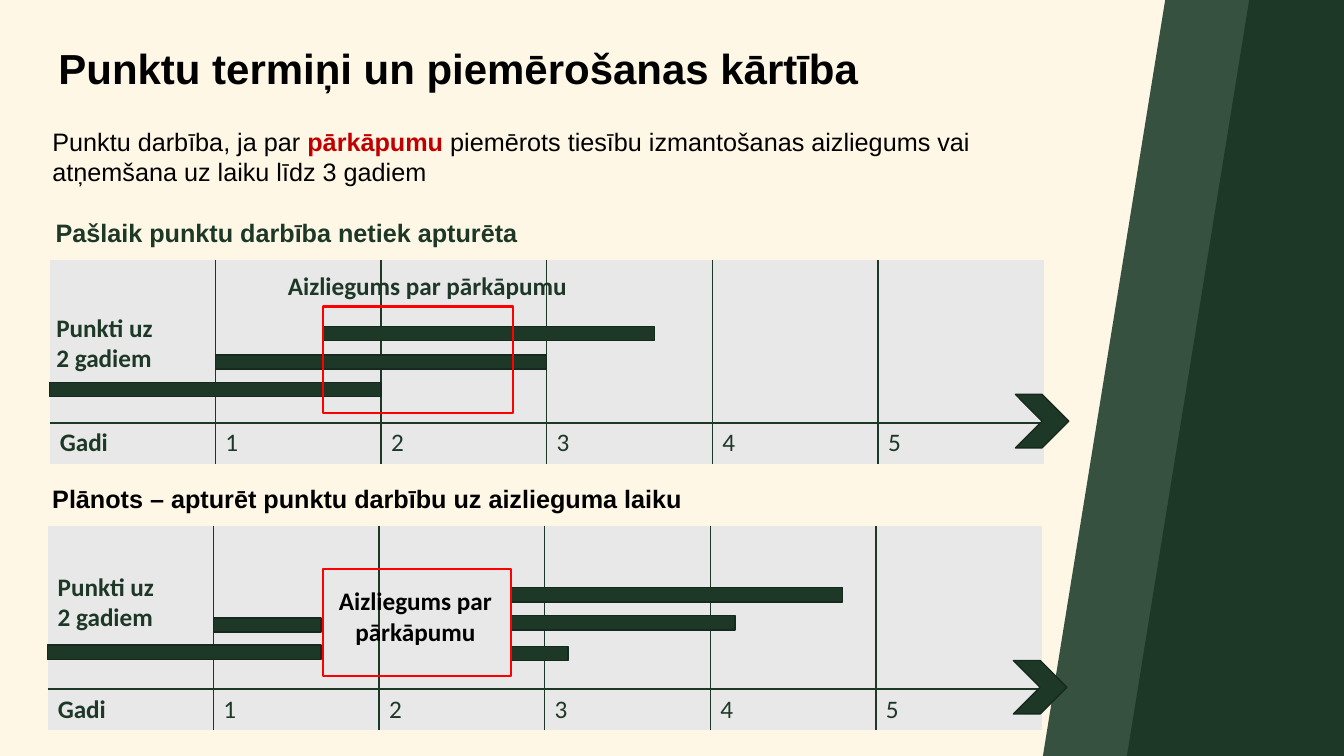
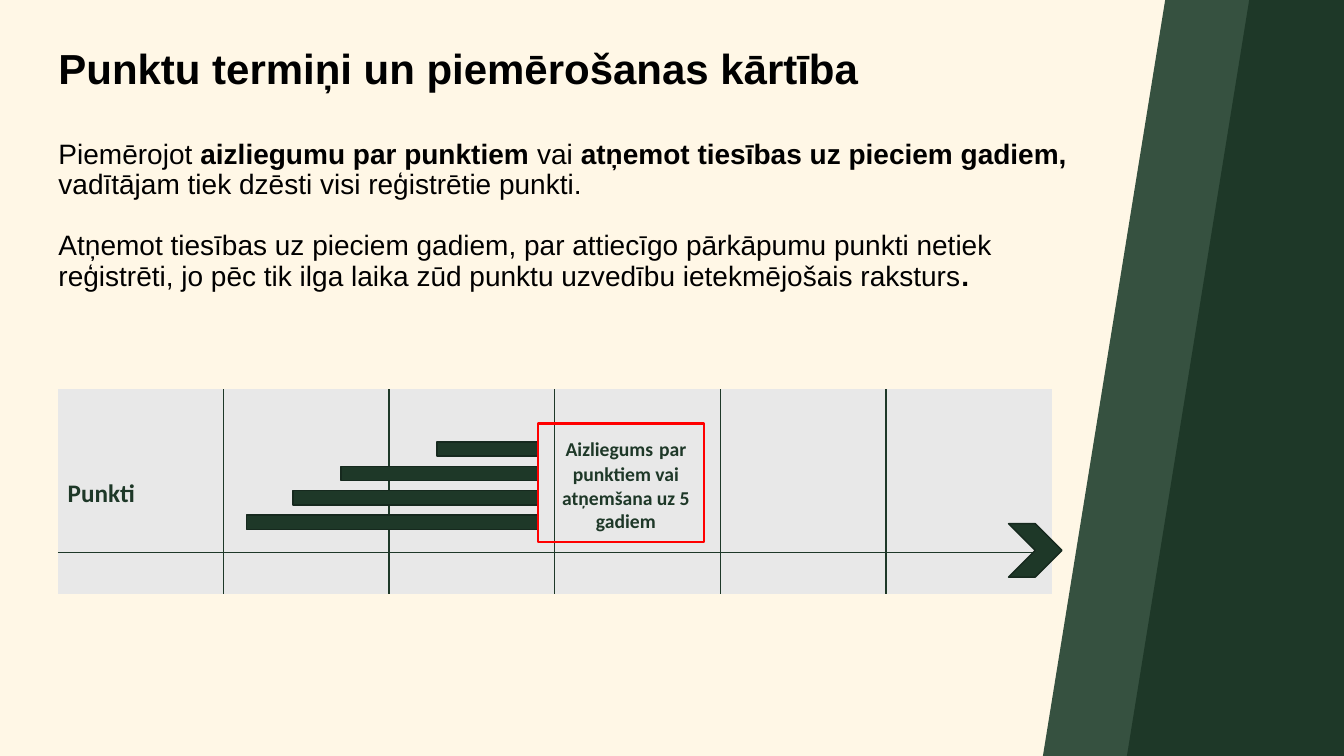
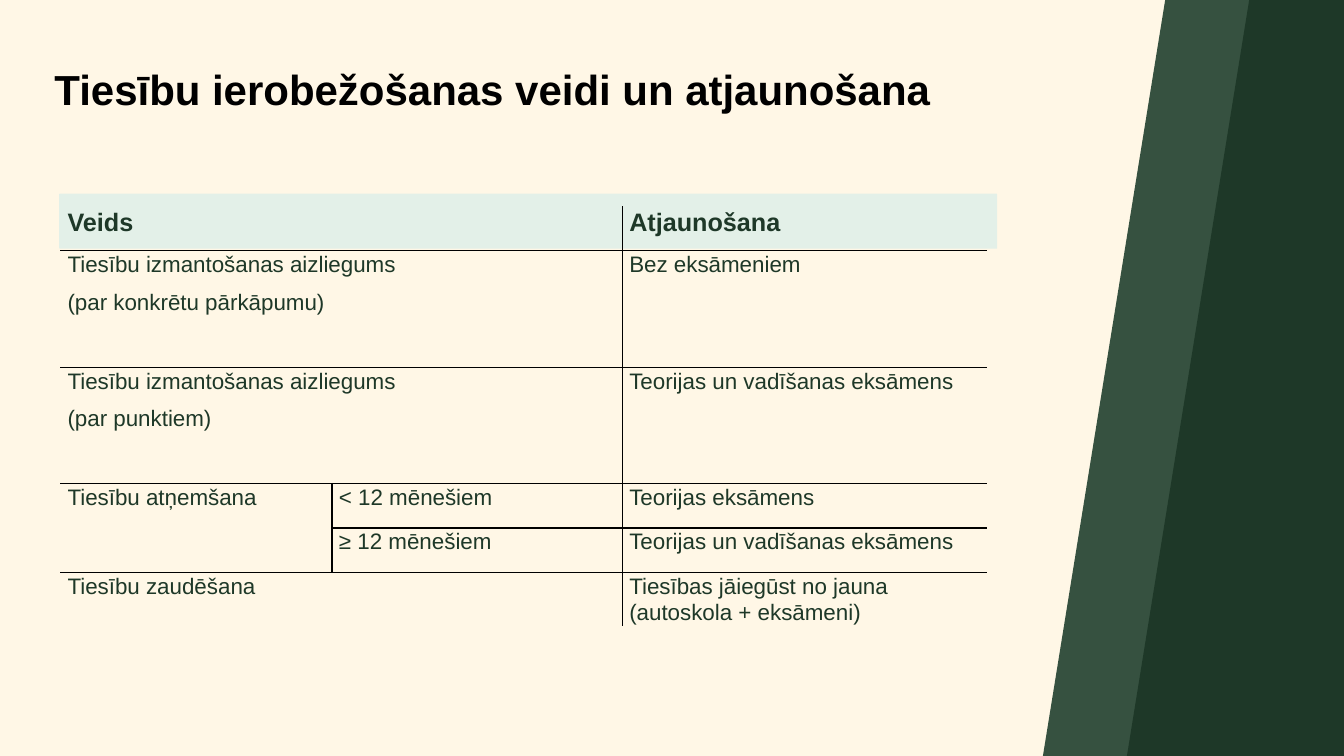
from dataclasses import dataclass

from lxml.etree import SubElement
from pptx import Presentation
from pptx.dml.color import RGBColor
from pptx.enum.shapes import MSO_SHAPE
from pptx.enum.text import MSO_ANCHOR, MSO_AUTO_SIZE, PP_ALIGN
from pptx.oxml import parse_xml
from pptx.oxml.ns import nsdecls, qn
from pptx.util import Inches, Pt


@dataclass(frozen=True)
class TextStyle:
    size: float
    font: str
    colour: str
    bold: bool = False


class Theme:
    cream, grey, mint = "FFF7E6", "E8E8E8", "E3F0E8"
    green, mid_green, dark_green = "1E3828", "365140", "16291E"
    black, red = "000000", "FF0000"
    title = TextStyle(30, "Arial", black, True)
    lead = TextStyle(18, "Arial", black)
    alert = TextStyle(18, "Arial", "C00000", True)
    heading = TextStyle(18, "Arial", black, True)
    green_heading = TextStyle(18, "Arial", green, True)
    body = TextStyle(20, "Arial", black)
    strong = TextStyle(20, "Arial", black, True)
    cell = TextStyle(16, "Arial", green)
    year = TextStyle(18, "Calibri", green)
    label = TextStyle(18, "Calibri", green, True)
    black_label = TextStyle(18, "Calibri", black, True)
    small_label = TextStyle(14, "Calibri", green, True)


prs = Presentation()
prs.slide_width, prs.slide_height = Inches(40) // 3, Inches(7.5)
PAGE_COLUMN, PAGE_ROW = prs.slide_width / 100, prs.slide_height / 100


def area(left, top, width, height, x=0, y=0, column=PAGE_COLUMN, row=PAGE_ROW):
    """Turn grid units into EMU; the default grid is percent of the slide."""
    return (int(x + left * column), int(y + top * row),
            int(width * column), int(height * row))


def write(paragraph, *runs, align=PP_ALIGN.LEFT, line_spacing=1.0):
    """Fill a paragraph with (style, text) runs."""
    paragraph.alignment = align
    paragraph.line_spacing = line_spacing
    paragraph.space_before = Pt(0)
    for style, text in runs:
        run = paragraph.add_run()
        run.text = text
        run.font.size, run.font.name, run.font.bold = Pt(style.size), style.font, style.bold
        run.font.color.rgb = RGBColor.from_string(style.colour)


# Slides and titles
TERMS = "Punktu termiņi un piemērošanas kārtība"
TITLE_AREA = (3.6, 5.7, 74, 15)
slides = []
for layout_index, title, title_area in [
    (1, TERMS, TITLE_AREA),
    (1, TERMS, TITLE_AREA),
    (5, "Tiesību ierobežošanas veidi un atjaunošana", (3.3, 8.5, 77.6, 15.3)),
]:
    slide = prs.slides.add_slide(prs.slide_layouts[layout_index])
    heading = slide.shapes.title
    heading.left, heading.top, heading.width, heading.height = area(*title_area)
    heading.text_frame.vertical_anchor = MSO_ANCHOR.TOP
    heading.text_frame.auto_size = MSO_AUTO_SIZE.NONE
    write(heading.text_frame.paragraphs[0], (Theme.title, title), line_spacing=0.9)
    slides.append(slide)
suspension, deletion, renewal = slides

# Shared background and bands, kept on the master
master = prs.slide_master
master.background.fill.solid()
master.background.fill.fore_color.rgb = RGBColor.from_string(Theme.cream)
for depth, (top_x, bottom_x, colour) in enumerate([
    (86.7, 77.6, Theme.mid_green), (92.95, 83.85, Theme.green),
]):
    corners = [(int(x * PAGE_COLUMN), int(y * PAGE_ROW))
               for x, y in [(top_x, 0), (bottom_x, 100), (100, 100), (100, 0)]]
    outline = suspension.shapes.build_freeform(*corners[0], scale=1.0)
    outline.add_line_segments(corners[1:], close=True)
    band = outline.convert_to_shape()
    band.shadow.inherit = False
    band.fill.solid()
    band.fill.fore_color.rgb = RGBColor.from_string(colour)
    band.line.fill.background()
    master.shapes.element.insert(2 + depth, band.element)

# Introductory text
for slide, body_area, line_spacing, paragraphs in [
    (suspension, (3.15, 16, 76.65, 9.5), 1.0, [
        [(Theme.lead, "Punktu darbība, ja par "), (Theme.alert, "pārkāpumu "),
         (Theme.lead, "piemērots tiesību izmantošanas aizliegums vai "
                      "atņemšana uz laiku līdz 3 gadiem")],
    ]),
    (deletion, (3.6, 17.9, 79.3, 29.9), 0.9, [
        [(Theme.body, "Piemērojot "), (Theme.strong, "aizliegumu par punktiem"),
         (Theme.body, " vai "), (Theme.strong, "atņemot tiesības uz pieciem gadiem, "),
         (Theme.body, "vadītājam tiek dzēsti visi reģistrētie punkti.")],
        [(Theme.body, "Atņemot tiesības uz pieciem gadiem, par attiecīgo pārkāpumu "
                      "punkti netiek reģistrēti, jo pēc tik ilga laika zūd punktu "
                      "uzvedību ietekmējošais raksturs"), (Theme.strong, ".")],
    ]),
]:
    body = slide.placeholders[1]
    body.left, body.top, body.width, body.height = area(*body_area)
    body.text_frame.auto_size = MSO_AUTO_SIZE.NONE
    for index, runs in enumerate(paragraphs):
        paragraph = body.text_frame.paragraphs[0] if index == 0 else body.text_frame.add_paragraph()
        properties = paragraph._p.get_or_add_pPr()
        properties.set("marL", "0")
        properties.set("indent", "0")
        SubElement(properties, qn("a:buNone"))
        write(paragraph, *runs, line_spacing=line_spacing)
        if index:
            paragraph.space_before = Pt(22)

for style, text, heading_area in [
    (Theme.green_heading, "Pašlaik punktu darbība netiek apturēta", (3.4, 28.1, 49.4, 5.3)),
    (Theme.heading, "Plānots – apturēt punktu darbību uz aizlieguma laiku", (3.15, 63.3, 49.4, 5.3)),
]:
    frame = suspension.shapes.add_textbox(*area(*heading_area)).text_frame
    frame.word_wrap = True
    write(frame.paragraphs[0], (style, text))

# Timelines: one column is a year; bars are (start, years, row)
YEARS, ROWS = 6, 5
YEAR_WIDTH, ROW_HEIGHT = Inches(9.86) / YEARS, Inches(2.02) / ROWS
AXIS_LABELS = ["Gadi", "1", "2", "3", "4", "5"]
BAN = "Aizliegums par pārkāpumu"
POINTS = "Punkti uz 2 gadiem"
ruled_tables = []
for slide, left, top, axis, bars, ban_area, arrow_start, captions in [
    (suspension, 3.7, 34.4, AXIS_LABELS,
     [(0, 2, 3), (1, 2, 2.33), (1.65, 2, 1.63)],
     (1.65, 1.14, 1.15, 2.62), 5.83,
     [((1, 0.12, 2.56, 1), PP_ALIGN.CENTER, [(Theme.label, BAN)]),
      ((-0.02, 1.16, 0.76, 1.76), PP_ALIGN.LEFT, [(Theme.label, POINTS)])]),
    (suspension, 3.55, 69.6, AXIS_LABELS,
     [(0, 1.65, 2.92), (1, 0.65, 2.25), (2.8, 2, 1.51), (2.8, 1.35, 2.2), (2.8, 0.34, 2.95)],
     (1.66, 1.06, 1.14, 2.63), 5.83,
     [((1.69, 1.34, 1.06, 1.76), PP_ALIGN.CENTER, [(Theme.black_label, BAN)]),
      ((0, 0.99, 0.8, 1.76), PP_ALIGN.LEFT, [(Theme.label, POINTS)])]),
    (deletion, 4.3, 51.5, [],
     [(start, 2.9 - start, 1.29 + 0.6 * step)
      for step, start in enumerate([2.29, 1.71, 1.42, 1.14])],
     (2.9, 0.84, 1, 2.92), 5.74,
     [((2.96, 0.92, 0.94, 2.75), PP_ALIGN.CENTER,
       [(Theme.small_label, "Aizliegums"), (Theme.label, " "),
        (Theme.small_label, "par punktiem vai atņemšana uz 5 gadiem")]),
      ((0, 2.05, 0.76, 1), PP_ALIGN.LEFT, [(Theme.label, "Punkti")])]),
]:
    x, y = area(left, top, 0, 0)[:2]
    grid = (x, y, YEAR_WIDTH, ROW_HEIGHT)
    timeline = slide.shapes.add_table(ROWS, YEARS, *area(0, 0, YEARS, ROWS, *grid)).table
    for column, text in enumerate(axis):
        write(timeline.cell(ROWS - 1, column).text_frame.paragraphs[0],
              (Theme.year if column else Theme.label, text))
    ruled_tables.append((timeline, {ROWS - 1}, Theme.green, Theme.grey))

    arrow_size = Inches(0.53)
    pieces = [(MSO_SHAPE.CHEVRON, (arrow_start, 3.3, arrow_size / YEAR_WIDTH, arrow_size / ROW_HEIGHT))]
    pieces += [(MSO_SHAPE.RECTANGLE, (start, row, years, 0.35)) for start, years, row in bars]
    for preset, piece_area in pieces:
        piece = slide.shapes.add_shape(preset, *area(*piece_area, *grid))
        piece.shadow.inherit = False
        piece.fill.solid()
        piece.fill.fore_color.rgb = RGBColor.from_string(Theme.green)
        piece.line.color.rgb = RGBColor.from_string(Theme.dark_green)
        piece.line.width = Pt(1)

    ban = slide.shapes.add_shape(MSO_SHAPE.RECTANGLE, *area(*ban_area, *grid))
    ban.shadow.inherit = False
    ban.fill.background()
    ban.line.color.rgb = RGBColor.from_string(Theme.red)
    ban.line.width = Pt(1.5)

    for caption_area, align, runs in captions:
        frame = slide.shapes.add_textbox(*area(*caption_area, *grid)).text_frame
        frame.word_wrap = True
        write(frame.paragraphs[0], *runs, align=align)

# Kinds of restriction and how rights are renewed
header_strip = renewal.shapes.add_shape(MSO_SHAPE.ROUNDED_RECTANGLE, *area(4.4, 25.6, 69.8, 7.3))
header_strip.adjustments[0] = 0.02
header_strip.shadow.inherit = False
header_strip.fill.solid()
header_strip.fill.fore_color.rgb = RGBColor.from_string(Theme.mint)
header_strip.line.fill.background()

BOTH_EXAMS = "Teorijas un vadīšanas eksāmens"
USE_BAN = "Tiesību izmantošanas aizliegums"
restrictions = [
    ["Veids", "", "Atjaunošana"],
    [USE_BAN + "\n(par konkrētu pārkāpumu)", "", "Bez eksāmeniem"],
    [USE_BAN + "\n(par punktiem)", "", BOTH_EXAMS],
    ["Tiesību atņemšana", "< 12 mēnešiem", "Teorijas eksāmens"],
    ["", "≥ 12 mēnešiem", BOTH_EXAMS],
    ["Tiesību zaudēšana", "", "Tiesības jāiegūst no jauna (autoskola + eksāmeni)"],
]
column_shares = [20.2, 21.6, 27.15]
row_shares = [5.87, 15.4, 15.4, 5.87, 5.87, 5.87]
renewal_table = renewal.shapes.add_table(
    len(row_shares), len(column_shares),
    *area(4.5, 27.3, sum(column_shares), sum(row_shares))).table
for column, share in zip(renewal_table.columns, column_shares):
    column.width = int(share * PAGE_COLUMN)
for row, share in zip(renewal_table.rows, row_shares):
    row.height = int(share * PAGE_ROW)
for row in (0, 1, 2, 5):
    renewal_table.cell(row, 0).merge(renewal_table.cell(row, 1))
renewal_table.cell(3, 0).merge(renewal_table.cell(4, 0))
for row, texts in enumerate(restrictions):
    for column, text in enumerate(texts):
        cell = renewal_table.cell(row, column)
        cell.margin_left = cell.margin_right = Inches(0.07)
        cell.margin_top = cell.margin_bottom = 0
        if cell.is_spanned:
            continue
        for index, line in enumerate(text.split("\n")):
            paragraph = cell.text_frame.add_paragraph() if index else cell.text_frame.paragraphs[0]
            write(paragraph, (Theme.cell if row else Theme.green_heading, line), line_spacing=1.07)
            paragraph.space_after = Pt(8)
ruled_tables.append((renewal_table, set(range(1, len(row_shares))), Theme.black, None))

# Inner rules and fills of every table; a rule lies above the row it is numbered by
for table, rules, line_colour, fill_colour in ruled_tables:
    table.first_row = table.horz_banding = False
    last_column = len(table.columns) - 1
    for row in range(len(table.rows)):
        for column in range(last_column + 1):
            cell = table.cell(row, column)
            if fill_colour:
                cell.fill.solid()
                cell.fill.fore_color.rgb = RGBColor.from_string(fill_colour)
            else:
                cell.fill.background()
            sides = {"L": column > 0, "R": column < last_column,
                     "T": row in rules, "B": row + 1 in rules}
            for position, (side, visible) in enumerate(sides.items()):
                paint = (f'<a:solidFill><a:srgbClr val="{line_colour}"/></a:solidFill>'
                         if visible else "<a:noFill/>")
                cell._tc.get_or_add_tcPr().insert(position, parse_xml(
                    f'<a:ln{side} {nsdecls("a")} w="{Pt(1)}">{paint}</a:ln{side}>'))

prs.save("out.pptx")
